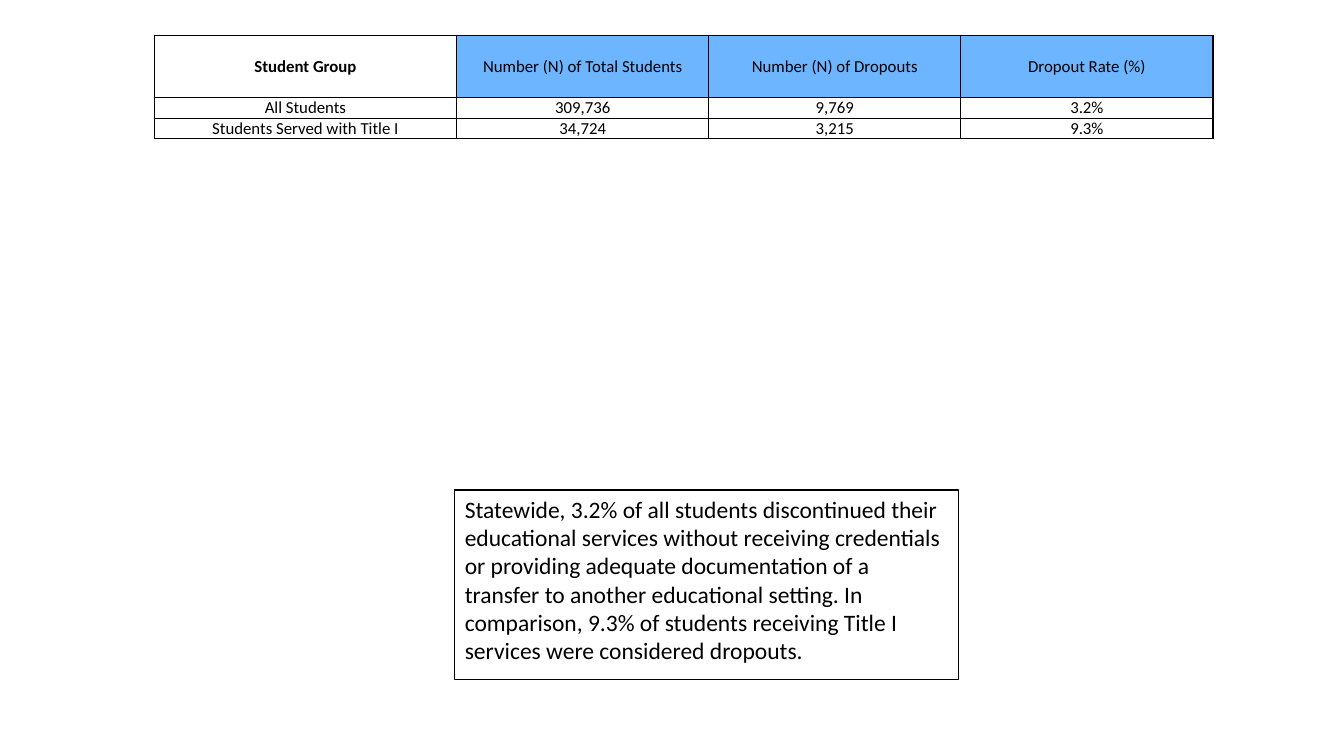
from lxml import etree
from pptx import Presentation
from pptx.dml.color import RGBColor
from pptx.enum.text import MSO_ANCHOR, MSO_AUTO_SIZE, PP_ALIGN
from pptx.oxml.ns import qn
from pptx.util import Inches, Pt

CENTER = PP_ALIGN.CENTER
MIDDLE = MSO_ANCHOR.MIDDLE
NO_AUTOFIT = MSO_AUTO_SIZE.NONE

FONT = "Calibri"
COLORS = {"ink": "000000", "header": "6DB6FF"}
COLUMN_WIDTHS = [3, 2.5, 2.5, 2.5]
ROW_HEIGHTS = [0.62, 0.2, 0.2]
ROWS = [
    ["Student Group", "Number (N) of Total Students", "Number (N) of Dropouts", "Dropout Rate (%)"],
    ["All Students", "309,736", "9,769", "3.2%"],
    ["Students Served with Title I", "34,724", "3,215", "9.3%"],
]
SUMMARY = (
    "Statewide, 3.2% of all students discontinued their educational services "
    "without receiving credentials or providing adequate documentation of a "
    "transfer to another educational setting. In comparison, 9.3% of students "
    "receiving Title I services were considered dropouts."
)


def color(name):
    return RGBColor.from_string(COLORS[name])


def set_font(paragraph, size, bold=False):
    font = paragraph.font
    font.name = FONT
    font.size = Pt(size)
    font.bold = bold
    font.color.rgb = color("ink")


def add_borders(cell):
    properties = cell._tc.get_or_add_tcPr()
    for index, side in enumerate(("lnL", "lnR", "lnT", "lnB")):
        line = etree.Element(qn(f"a:{side}"), w=str(Pt(1)))
        fill = etree.SubElement(line, qn("a:solidFill"))
        etree.SubElement(fill, qn("a:srgbClr"), val=COLORS["ink"])
        properties.insert(index, line)


def format_cell(cell, text, is_header, is_corner):
    cell.text = text
    cell.vertical_anchor = MIDDLE
    cell.margin_left = cell.margin_right = cell.margin_top = cell.margin_bottom = 0
    if is_header and not is_corner:
        cell.fill.solid()
        cell.fill.fore_color.rgb = color("header")
    else:
        cell.fill.background()
    add_borders(cell)
    paragraph = cell.text_frame.paragraphs[0]
    paragraph.alignment = CENTER
    set_font(paragraph, 12, bold=is_corner)


def add_dropout_table(slide, left, top):
    table = slide.shapes.add_table(
        len(ROWS), len(COLUMN_WIDTHS), Inches(left), Inches(top),
        Inches(sum(COLUMN_WIDTHS)), Inches(sum(ROW_HEIGHTS)),
    ).table
    for column, width in zip(table.columns, COLUMN_WIDTHS):
        column.width = Inches(width)
    for row_index, (row, height) in enumerate(zip(table.rows, ROW_HEIGHTS)):
        row.height = Inches(height)
        for column_index, cell in enumerate(row.cells):
            is_header = row_index == 0
            format_cell(cell, ROWS[row_index][column_index], is_header,
                        is_header and column_index == 0)


def fill_summary(body, left, top, width, height):
    body.left, body.top = Inches(left), Inches(top)
    body.width, body.height = Inches(width), Inches(height)
    body.line.color.rgb = color("ink")
    body.line.width = Pt(1)
    frame = body.text_frame
    frame.text = SUMMARY
    frame.word_wrap = True
    frame.auto_size = NO_AUTOFIT
    paragraph = frame.paragraphs[0]
    paragraph.space_before = Pt(0)
    # Plain paragraph without the template's bullet and indent
    properties = paragraph._p.get_or_add_pPr()
    properties.set("marL", "0")
    properties.set("indent", "0")
    etree.SubElement(properties, qn("a:buNone"))
    set_font(paragraph, 16.8)


def main():
    presentation = Presentation()
    presentation.slide_width = Inches(13.33)
    presentation.slide_height = Inches(7.5)
    slide = presentation.slides.add_slide(presentation.slide_layouts[1])

    # The slide shows no heading
    title = slide.shapes.title._element
    title.getparent().remove(title)

    # Summary box under the second and third columns
    fill_summary(slide.placeholders[1], 4.51, 4.86, 5, 1.88)

    # Dropout figures
    add_dropout_table(slide, 1.53, 0.35)

    presentation.save("out.pptx")


if __name__ == "__main__":
    main()
